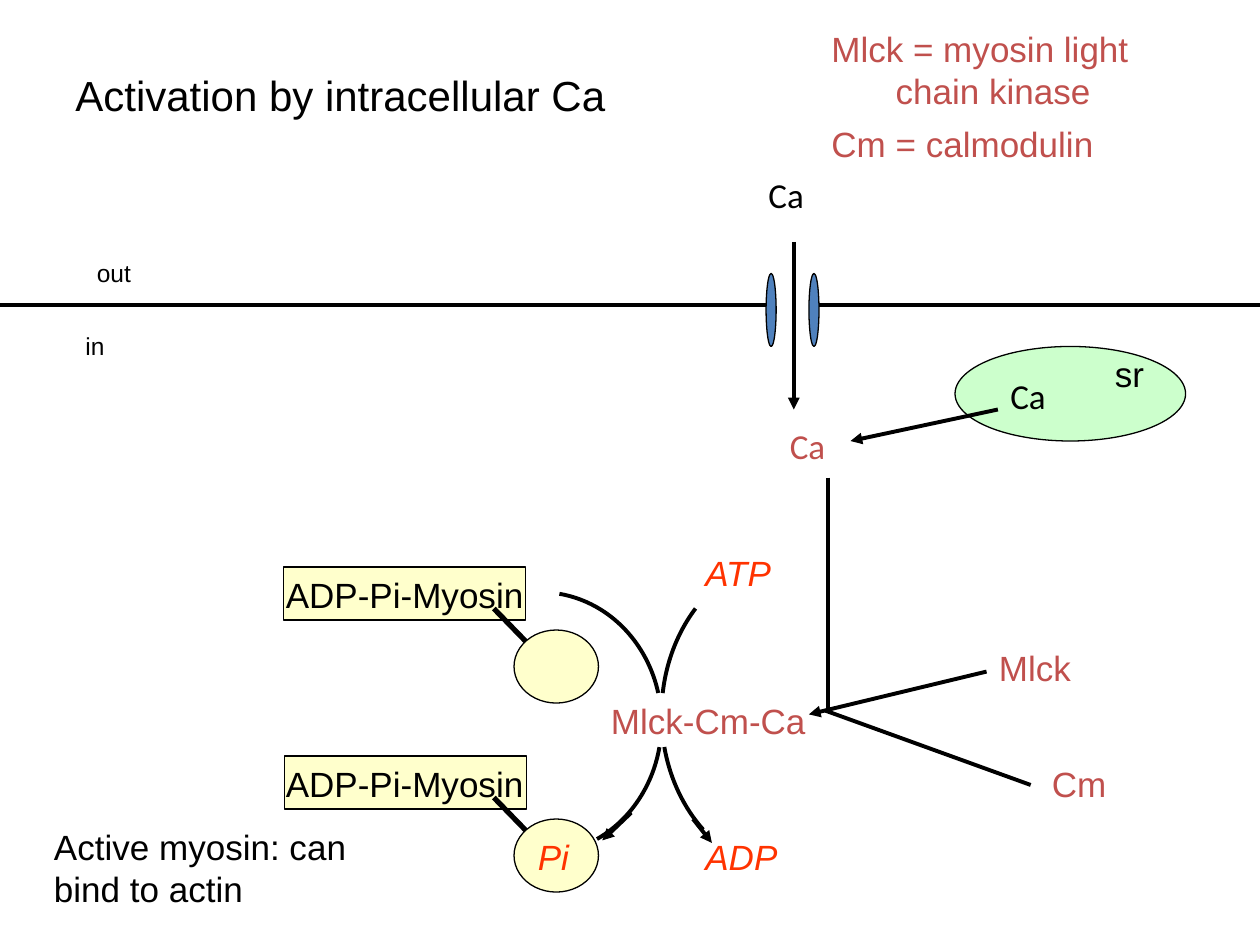
import pptx
import pptx.util
import pptx.dml.color
import pptx.enum.shapes
import pptx.oxml
import pptx.oxml.ns

KIND = pptx.enum.shapes.MSO_SHAPE
INK, RED, HOT = "000000", "C0504D", "FF3300"
CREAM, MINT, BLUE = "FFFFCC", "CCFFCC", "4F81BD"

# centre, radii, start and end angle (clockwise from the right)
ARCS = [
    (4.29, 5.74, 0.96, 1.04, 278.3, 345.6),
    (4.29, 5.74, 0.96, 1.04, 11.4, 64),
    (6.29, 5.67, 1.04, 1.25, 189.3, 227.5),
    (6.29, 5.67, 1.04, 1.25, 127.8, 165.7),
]
# from, to, arrowhead at the end
LINES = [
    (0, 2.42, 6.08, 2.42, False),
    (6.5, 2.42, 10, 2.42, False),
    (5.01, 6.45, 4.78, 6.67, True),
    (5.5, 6.5, 5.65, 6.69, True),
    (7.83, 5.33, 6.42, 5.67, True),
    (6.57, 3.79, 6.57, 5.62, False),
    (8.18, 6.23, 6.55, 5.64, False),
    (7.92, 3.25, 6.75, 3.5, True),
    (6.3, 1.92, 6.3, 3.25, True),
]
OVALS = [
    (7.58, 2.75, 1.83, 0.75, MINT),
    (6.08, 2.17, 0.08, 0.58, BLUE),
    (6.42, 2.17, 0.08, 0.58, BLUE),
]
MYOSIN = [(2.25, 4.5), (2.26, 6)]
# text, left, top, width, height, size, colour
NOTES = [
    ("Activation by intracellular Ca", 0.5, 0.5, 5.25, 0.5, 24, INK),
    ("out", 0.67, 2, 0.58, 0.33, 14, INK),
    ("in", 0.58, 2.58, 0.58, 0.33, 14, INK),
    ("sr", 8.75, 2.75, 0.58, 0.43, 20, INK),
    ("Active myosin: can bind to actin", 0.33, 6.5, 2.58, 0.77, 20, INK),
    ("Mlck-Cm-Ca", 4.75, 5.5, 2, 0.43, 20, RED),
    ("Cm", 8.25, 6, 0.83, 0.43, 20, RED),
    ("Mlck", 7.83, 5.08, 1.42, 0.43, 20, RED),
    ("Cm = calmodulin", 6.5, 0.92, 2.58, 0.43, 20, RED),
]
ENERGY = [("ATP", 5.5, 4.33, 1), ("ADP", 5.5, 6.58, 1), ("Pi", 4.17, 6.58, 0.83)]
IONS = [(7.92, 2.92, INK), (6, 1.33, INK), (6.17, 3.32, RED)]
KEY = ["Mlck = myosin light", "chain kinase"]

deck = pptx.Presentation()
deck.slide_width, deck.slide_height = pptx.util.Inches(10), pptx.util.Inches(7.5)
shapes = deck.slides.add_slide(deck.slide_layouts[6]).shapes


def inch(*nums):
    return [pptx.util.Inches(n) for n in nums]


def tint(hue):
    return pptx.dml.color.RGBColor.from_string(hue)


def pen(item, width):
    item.line.color.rgb = tint(INK)
    item.line.width = pptx.util.Pt(width)


def form(kind, box, fill=None, width=0.75):
    item = shapes.add_shape(kind, *inch(*box))
    item.shadow.inherit = False
    pen(item, width)
    if fill:
        item.fill.solid()
        item.fill.fore_color.rgb = tint(fill)
    else:
        item.fill.background()
    return item


def line(ends, head=False, width=2.25):
    item = shapes.add_connector(pptx.enum.shapes.MSO_CONNECTOR.STRAIGHT, *inch(*ends))
    pen(item, width)
    if head:
        tail = pptx.oxml.parse_xml(
            f'<a:tailEnd {pptx.oxml.ns.nsdecls("a")} type="triangle"/>')
        item.line._get_or_add_ln().append(tail)
    item._element.spPr.append(
        pptx.oxml.parse_xml(f'<a:effectLst {pptx.oxml.ns.nsdecls("a")}/>'))


def note(rows, box, size=20, hue=INK, font="Arial", slant=False, wrap=True):
    """Write rows of text, parted by line breaks, and return the paragraph."""
    frame = shapes.add_textbox(*inch(*box)).text_frame
    frame.word_wrap = wrap
    para = frame.paragraphs[0]
    for i, row in enumerate(rows):
        if i:
            para.add_line_break()
        run = para.add_run()
        run.text = row
        run.font.name, run.font.size = font, pptx.util.Pt(size)
        run.font.color.rgb = tint(hue)
        if slant:
            run.font.italic = True
    return para


for x, y, rx, ry, start, end in ARCS:
    arc = form(KIND.ARC, (x - rx, y - ry, 2 * rx, 2 * ry), width=2.25)
    # angles count in 60000ths of a degree, adjustments in 100000ths
    arc.adjustments[0], arc.adjustments[1] = start * 0.6, end * 0.6

for *box, hue in OVALS:
    form(KIND.OVAL, box, hue)
for *ends, head in LINES:
    line(ends, head)

for x, y in MYOSIN:
    form(KIND.RECTANGLE, (x, y, 1.92, 0.42), CREAM)
    note(["ADP-Pi-Myosin"], (2.17, y, 2.33, 0.43))
    line((4.25, y + 0.67, 3.92, y + 0.33), width=3)
    form(KIND.OVAL, (4.08, y + 0.5, 0.67, 0.58), CREAM)

for text, *box, size, hue in NOTES:
    note([text], box, size, hue)
for text, x, y, w in ENERGY:
    note([text], (x, y, w, 0.43), hue=HOT, slant=True)
for x, y, hue in IONS:
    note(["Ca"], (x, y, 0.56, 0.43), hue=hue, font="Calibri", wrap=False)

props = note(KEY, (6.5, 0.17, 3.17, 0.77), hue=RED)._p.get_or_add_pPr()
hang = pptx.util.Inches(0.51)
props.set("marL", str(hang))
props.set("indent", str(-hang))

deck.save("out.pptx")
